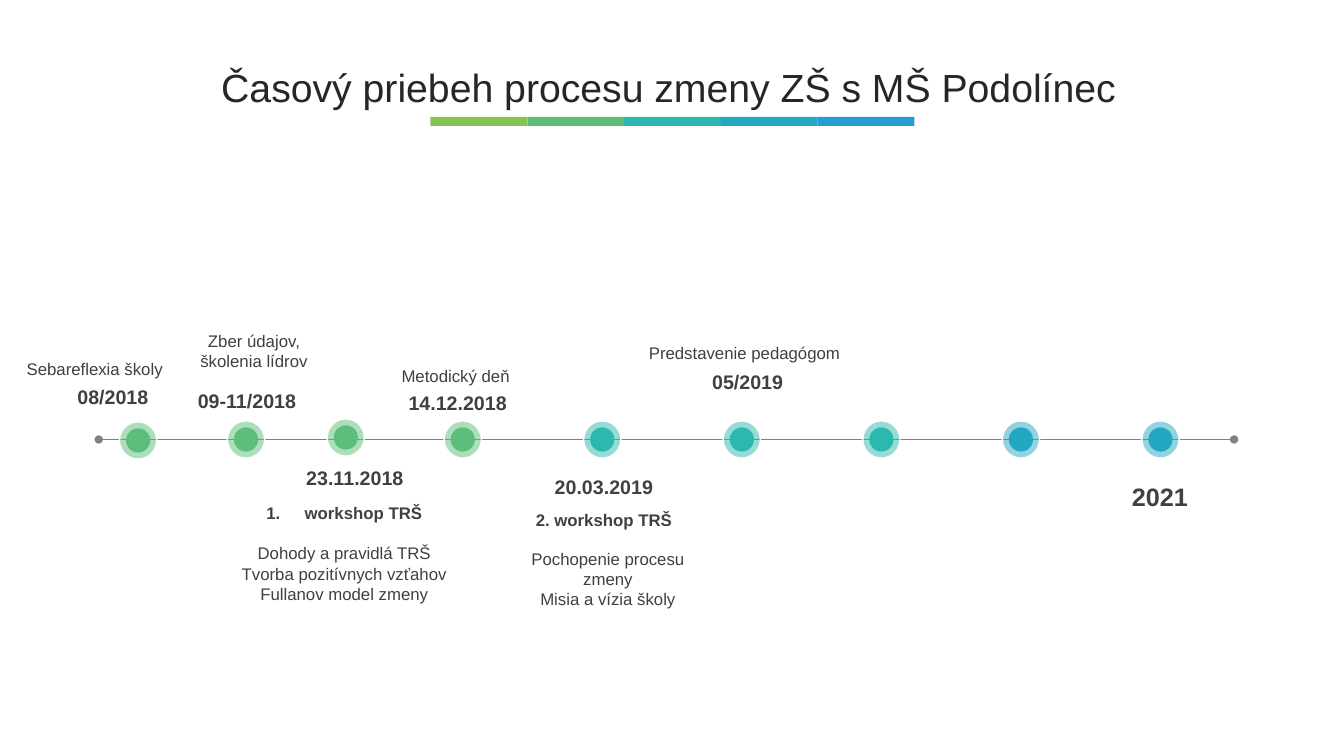
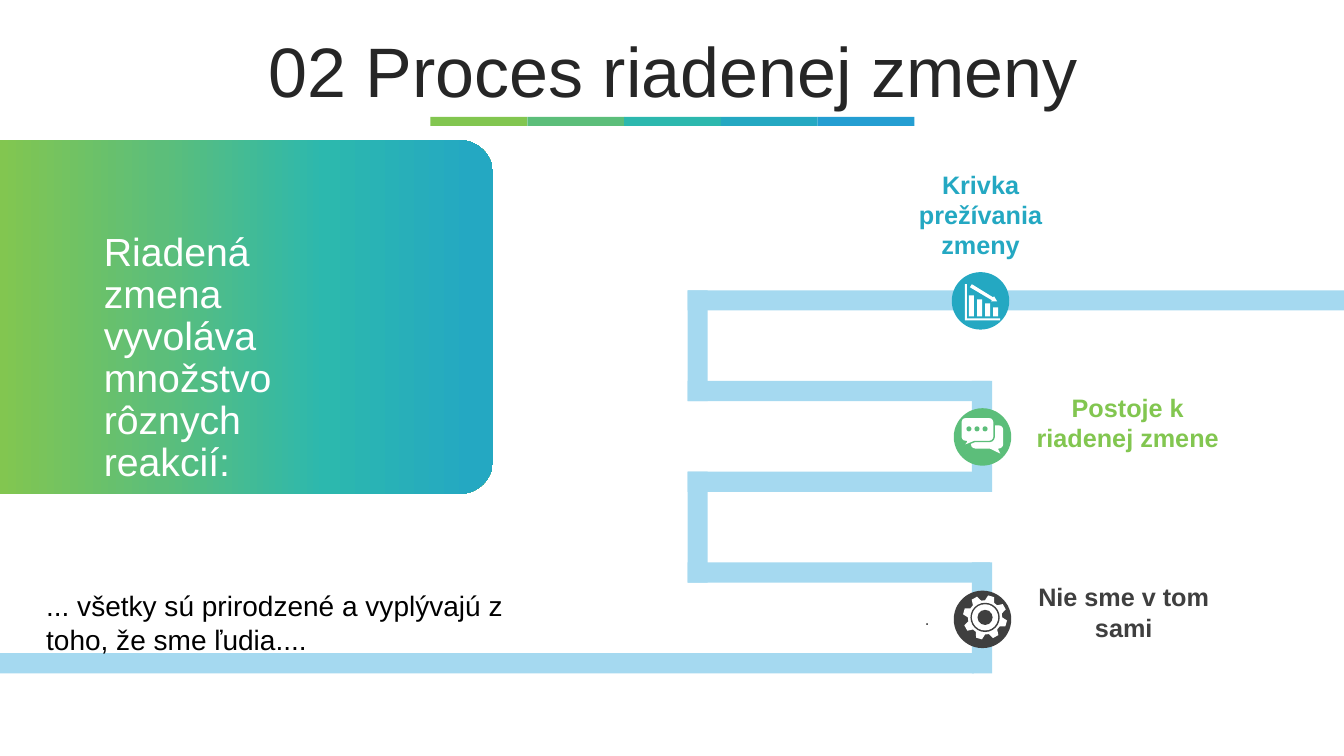
import math

import lxml.etree
import pptx
import pptx.dml.color
import pptx.enum.shapes
import pptx.enum.text
import pptx.oxml
import pptx.oxml.ns
import pptx.util

Inches = pptx.util.Inches
Pt = pptx.util.Pt
RGBColor = pptx.dml.color.RGBColor
SHAPE = pptx.enum.shapes.MSO_SHAPE
ALIGN = pptx.enum.text.PP_ALIGN
ANCHOR = pptx.enum.text.MSO_ANCHOR
qn = pptx.oxml.ns.qn

LIME = RGBColor(0x82, 0xC6, 0x50)
GREEN = RGBColor(0x5C, 0xBE, 0x7A)
TEAL = RGBColor(0x2C, 0xB8, 0xAE)
CYAN = RGBColor(0x24, 0xA8, 0xC2)
BLUE = RGBColor(0x24, 0x9E, 0xD2)
PALE_BLUE = RGBColor(0xA5, 0xD9, 0xF0)
TITLE_COLOR = RGBColor(0x26, 0x26, 0x26)
TEXT_COLOR = RGBColor(0x40, 0x40, 0x40)
DARK = RGBColor(0x3F, 0x3F, 0x3F)
GRAY = RGBColor(0x80, 0x80, 0x80)
WHITE = RGBColor(0xFF, 0xFF, 0xFF)
BLACK = RGBColor(0, 0, 0)

FONT = "Arial"
STRIPE = (LIME, GREEN, TEAL, CYAN, BLUE)


class Deck:
    def __init__(self):
        self.presentation = pptx.Presentation()
        self.presentation.slide_width = Inches(13.33)
        self.presentation.slide_height = Inches(7.5)
        self.slide = None

    def new_slide(self, title, box, size, spacing):
        """Start a slide with its title and the coloured stripe below it."""
        self.slide = self.presentation.slides.add_slide(self.presentation.slide_layouts[6])
        for index, color in enumerate(STRIPE):
            self.shape(SHAPE.RECTANGLE, (4.27 + 0.96 * index, 1.16, 0.96, 0.09), color)
        self.text(title, box, size=size, color=TITLE_COLOR, anchor=ANCHOR.MIDDLE, spacing=spacing)

    def text(self, text, box, size=12, color=TEXT_COLOR, bold=False, align=ALIGN.CENTER,
             anchor=ANCHOR.TOP, spacing=None, insets=(0.1, 0.05), numbered=False):
        """Add a text box; each line of text is a paragraph."""
        shape = self.slide.shapes.add_textbox(*map(Inches, box))
        frame = shape.text_frame
        frame.word_wrap = True
        frame.vertical_anchor = anchor
        frame.margin_left = frame.margin_right = Inches(insets[0])
        frame.margin_top = frame.margin_bottom = Inches(insets[1])
        for index, line in enumerate(text.split("\n")):
            paragraph = frame.paragraphs[0] if index == 0 else frame.add_paragraph()
            if numbered:
                properties = paragraph._p.get_or_add_pPr()
                properties.set("marL", str(Inches(0.38)))
                properties.set("indent", str(-Inches(0.38)))
                number = lxml.etree.SubElement(properties, qn("a:buAutoNum"))
                number.set("type", "arabicPeriod")
            paragraph.alignment = align
            if spacing is not None:
                paragraph.line_spacing = spacing
            run = paragraph.add_run()
            run.text = line
            run.font.name = FONT
            run.font.size = Pt(size)
            run.font.bold = bold
            run.font.color.rgb = color

    def paint(self, shape, fill, outline=None):
        shape.shadow.inherit = False
        shape.fill.solid()
        shape.fill.fore_color.rgb = fill
        if outline is None:
            shape.line.fill.background()
        else:
            shape.line.color.rgb = outline
            shape.line.width = Pt(1)
        return shape

    def shape(self, kind, box, fill, outline=None, adjustments=()):
        shape = self.slide.shapes.add_shape(kind, *map(Inches, box))
        for index, value in enumerate(adjustments):
            shape.adjustments[index] = value
        return self.paint(shape, fill, outline)

    def disc(self, x, y, radius, fill, outline=None):
        box = (x - radius, y - radius, 2 * radius, 2 * radius)
        return self.shape(SHAPE.OVAL, box, fill, outline)

    def polygon(self, points, fill):
        corners = [(Inches(x), Inches(y)) for x, y in points]
        builder = self.slide.shapes.build_freeform(*corners[0])
        builder.add_line_segments(corners[1:], close=True)
        return self.paint(builder.convert_to_shape(), fill)

    def gradient_panel(self, box, stops):
        """Add a panel turned by 90 degrees, rounded on the right."""
        shape = self.shape(SHAPE.ROUND_2_SAME_RECTANGLE, box, WHITE, adjustments=(0.095, 0))
        shape.rotation = 90
        stop_xml = "".join(
            f'<a:gs pos="{percent * 1000}"><a:srgbClr val="{color}"/></a:gs>'
            for percent, color in stops)
        gradient = pptx.oxml.parse_xml(
            f'<a:gradFill {pptx.oxml.ns.nsdecls("a")} rotWithShape="1"><a:gsLst>{stop_xml}</a:gsLst>'
            '<a:lin ang="16200000" scaled="0"/></a:gradFill>')
        properties = shape._element.spPr
        properties.replace(properties.find(qn("a:solidFill")), gradient)

    def axis(self, left, right, y):
        """Add a horizontal line with a dot at both ends."""
        line = self.slide.shapes.add_connector(
            pptx.enum.shapes.MSO_CONNECTOR.STRAIGHT,
            Inches(left), Inches(y), Inches(right), Inches(y))
        line.line.color.rgb = GRAY
        line.line.width = Pt(1.25)
        for tag in ("a:headEnd", "a:tailEnd"):
            lxml.etree.SubElement(line.line._get_or_add_ln(), qn(tag)).set("type", "oval")
        lxml.etree.SubElement(line._element.spPr, qn("a:effectLst"))

    def marker(self, x, y, color):
        """Add a timeline point: a disc inside a half transparent halo."""
        halo = self.disc(x, y, 0.185, color, WHITE)
        fill_color = halo._element.spPr.find(qn("a:solidFill"))[0]
        lxml.etree.SubElement(fill_color, qn("a:alpha")).set("val", "50000")
        self.disc(x, y, 0.12, color)

    def chart_icon(self):
        self.disc(9.725, 2.985, 0.285, CYAN)
        for index in range(4):
            top = 2.93 + 0.04 * index
            self.shape(SHAPE.RECTANGLE, (9.61 + 0.08 * index, top, 0.05, 3.14 - top), WHITE)
        self.polygon([(9.64, 2.82), (9.85, 2.95), (9.86, 2.94), (9.89, 2.99),
                      (9.83, 2.99), (9.84, 2.98), (9.62, 2.85)], WHITE)
        self.polygon([(9.57, 2.82), (9.59, 2.82), (9.59, 3.16), (9.92, 3.16),
                      (9.92, 3.18), (9.57, 3.18)], WHITE)

    def chat_icon(self):
        self.disc(9.745, 4.335, 0.285, GREEN)
        bubble = SHAPE.ROUNDED_RECTANGULAR_CALLOUT
        self.shape(bubble, (9.63, 4.22, 0.32, 0.23), WHITE, adjustments=(0.41, 0.72, 0.19))
        self.shape(bubble, (9.53, 4.14, 0.33, 0.24), WHITE, GREEN, (-0.44, 0.7, 0.19))
        for index in range(3):
            self.disc(9.61 + 0.08 * index, 4.255, 0.025, GREEN)

    def gear_icon(self):
        x, y = 9.77, 6.125
        self.disc(9.745, 6.145, 0.285, DARK)
        outline = []
        for tooth in range(8):
            for offset, radius in ((-16, 0.17), (-8, 0.22), (8, 0.22), (16, 0.17)):
                angle = math.radians(16 + 45 * tooth + offset)
                outline.append((x + radius * math.sin(angle), y - radius * math.cos(angle)))
        self.polygon(outline, WHITE)
        for radius, color in ((0.145, DARK), (0.13, WHITE), (0.075, DARK)):
            self.disc(x, y, radius, color)


def build_timeline(deck):
    deck.new_slide("Časový priebeh procesu zmeny ZŠ s MŠ Podolínec",
                   (0.25, 0.45, 12.76, 0.93), 28, 0.7)

    # Axis and points; the later points are evenly spaced
    deck.axis(0.98, 12.24, 4.36)
    first, last = 4.59, 11.51
    points = [(1.37, 4.37), (2.44, 4.36), (3.43, 4.34)]
    points += [(first + (last - first) / 5 * index, 4.36) for index in range(6)]
    colors = [GREEN] * 4 + [TEAL] * 3 + [CYAN] * 2
    for (x, y), color in zip(points, colors):
        deck.marker(x, y, color)

    # Dates
    for date, left, top, width in (
            ("08/2018", 0.55, 3.77, 1.14),
            ("09-11/2018", 1.82, 3.81, 1.26),
            ("23.11.2018", 2.89, 4.57, 1.26),
            ("14.12.2018", 3.9, 3.83, 1.28),
            ("20.03.2019", 5.27, 4.66, 1.44),
            ("05/2019", 6.84, 3.62, 1.15)):
        deck.text(date, (left, top, width, 0.33), size=14, bold=True)
    deck.text("2021", (11.1, 4.73, 0.81, 0.4), size=18, bold=True)

    # Events
    for event, box in (
            ("Sebareflexia školy", (-0.16, 3.51, 2.2, 0.3)),
            ("Zber údajov,\nškolenia lídrov", (1.7, 3.23, 1.64, 0.5)),
            ("Metodický deň", (3.42, 3.58, 2.2, 0.3)),
            ("Predstavenie pedagógom", (6.28, 3.35, 2.21, 0.3)),
            ("Dohody a pravidlá TRŠ\nTvorba pozitívnych vzťahov\nFullanov model zmeny",
             (2.07, 5.34, 2.69, 0.7)),
            ("Pochopenie procesu zmeny\nMisia a vízia školy", (4.93, 5.39, 2.2, 0.7))):
        deck.text(event, box)
    deck.text("workshop TRŠ", (2.07, 4.94, 2.69, 0.3), bold=True, numbered=True)
    deck.text("2. workshop TRŠ", (4.89, 5.01, 2.2, 0.3), bold=True)


def build_process(deck):
    deck.new_slide("02 Proces riadenej zmeny", (0.35, 0.37, 12.66, 0.79), 50, 0.8)

    # Panel with the lead statement
    deck.gradient_panel((0.69, 0.7, 3.51, 4.89), ((0, LIME), (33, GREEN), (66, TEAL), (96, CYAN)))
    deck.text("Riadená zmena vyvoláva množstvo rôznych reakcií:", (0.99, 2.31, 1.94, 2.5),
              size=28, color=WHITE, align=ALIGN.LEFT, spacing=Pt(30), insets=(0.04, 0))

    # Winding road: five rows joined on the left and right by turns
    road, step, left, right = 0.2, 0.9, 6.82, 9.64
    rows = ((left, 13.33), (left, 9.82), (left, 9.82), (left, 9.82), (0, 9.66))
    for index, (start, end) in enumerate(rows):
        top = 2.88 + step * index
        deck.shape(SHAPE.RECTANGLE, (start, top, end - start, road), PALE_BLUE)
        if index < len(rows) - 1:
            turn = right if index % 2 else left
            deck.shape(SHAPE.RECTANGLE, (turn, top, road, step + road), PALE_BLUE)

    # Stations
    deck.chart_icon()
    deck.chat_icon()
    deck.gear_icon()
    for label, box, color in (
            ("Krivka prežívania zmeny", (8.72, 1.68, 2.01, 0.9), CYAN),
            ("Postoje k riadenej zmene", (10.18, 3.89, 2.01, 0.6), LIME),
            ("Nie sme v tom sami", (10.14, 5.77, 2.01, 0.6), DARK)):
        deck.text(label, box, size=18, color=color, bold=True,
                  anchor=ANCHOR.MIDDLE, insets=(0, 0))

    # Closing words
    deck.text(".", (7.02, 6.04, 2.2, 0.2), align=ALIGN.RIGHT, insets=(0, 0))
    deck.text("... všetky sú prirodzené a vyplývajú z toho, že sme ľudia....",
              (0.36, 5.79, 5.3, 0.77), size=20, color=BLACK, align=ALIGN.LEFT)


def main():
    deck = Deck()
    build_timeline(deck)
    build_process(deck)
    deck.presentation.save("out.pptx")


if __name__ == "__main__":
    main()
